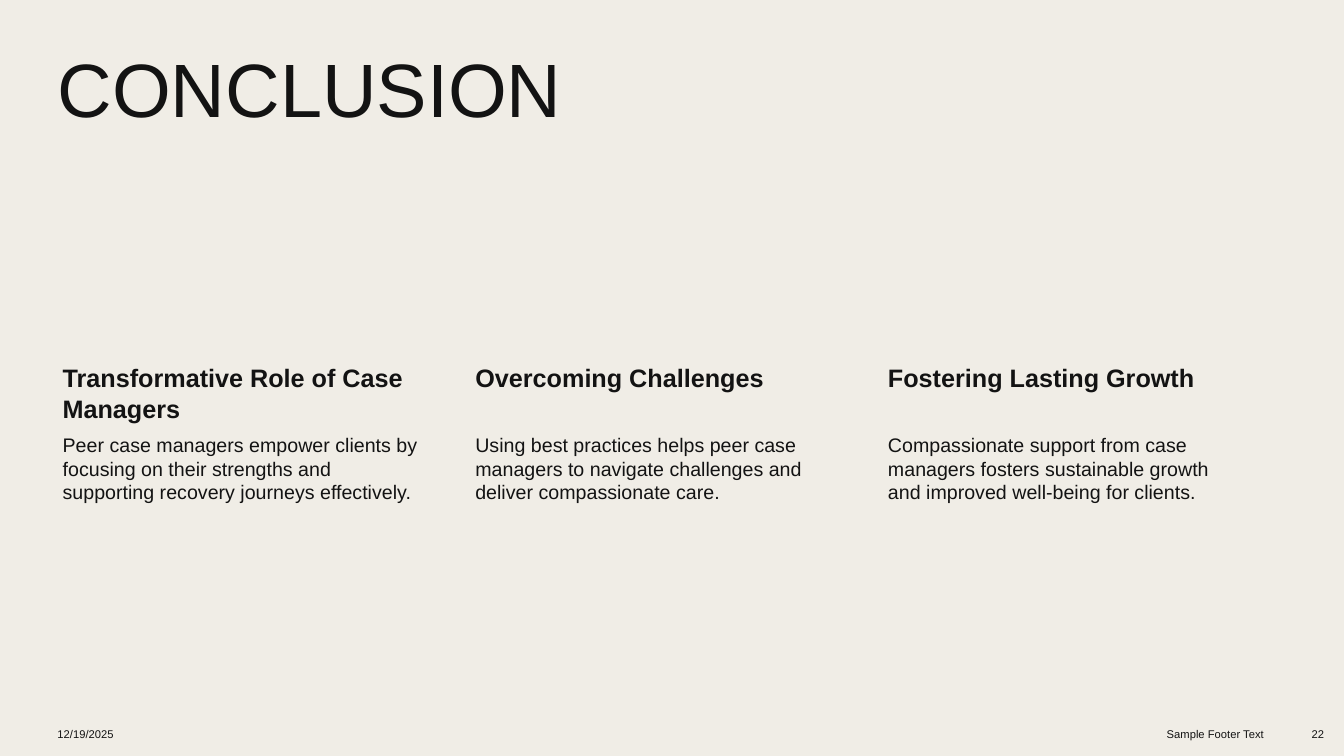
from dataclasses import dataclass

from pptx import Presentation
from pptx.dml.color import RGBColor
from pptx.enum import text
from pptx.util import Pt


@dataclass(frozen=True)
class Theme:
    font: str = "Arial"
    ink: RGBColor = RGBColor(0x13, 0x13, 0x13)
    paper: RGBColor = RGBColor(0xF0, 0xED, 0xE6)
    title: int = 54
    heading: int = 18
    body: int = 14
    footer: int = 8


theme = Theme()


def write(box, wording, size, bold=False, align=text.PP_ALIGN.LEFT,
          anchor=text.MSO_ANCHOR.TOP, insets=(7.2, 3.6, 7.2, 3.6)):
    """Fill a box with one styled paragraph; insets run left, top, right, bottom."""
    frame = box.text_frame
    frame.text = wording
    frame.word_wrap = True
    frame.auto_size = text.MSO_AUTO_SIZE.NONE
    frame.vertical_anchor = anchor
    (frame.margin_left, frame.margin_top,
     frame.margin_right, frame.margin_bottom) = map(Pt, insets)
    para = frame.paragraphs[0]
    para.alignment = align
    font = para.runs[0].font
    font.name, font.size, font.bold = theme.font, Pt(size), bold
    font.color.rgb = theme.ink
    return para


# Deck and background
deck = Presentation()
deck.slide_width, deck.slide_height = Pt(960), Pt(540)
page = deck.slides.add_slide(deck.slide_layouts[5])
page.background.fill.solid()
page.background.fill.fore_color.rgb = theme.paper

# Title
left = 34
title = page.shapes.title
title.left, title.top, title.width, title.height = Pt(left), Pt(34), Pt(857.5), Pt(128)
write(title, "CONCLUSION", theme.title).line_spacing = 0.9

# Three columns, each a heading above a body
columns = [
    ("Transformative Role of Case Managers",
     "Peer case managers empower clients by focusing on their strengths and "
     "supporting recovery journeys effectively."),
    ("Overcoming Challenges",
     "Using best practices helps peer case managers to navigate challenges and "
     "deliver compassionate care."),
    ("Fostering Lasting Growth",
     "Compassionate support from case managers fosters sustainable growth and "
     "improved well-being for clients."),
]
column_width, column_pitch = 268, 294.75
heading_top, heading_height, body_height = 257, 51, 172
for index, (heading, body) in enumerate(columns):
    column = page.shapes.add_group_shape()
    x = left + index * column_pitch
    heading_box = column.shapes.add_textbox(
        Pt(x), Pt(heading_top), Pt(column_width), Pt(heading_height))
    write(heading_box, heading, theme.heading, bold=True, insets=(10.8, 2, 2, 2))
    body_box = column.shapes.add_textbox(
        Pt(x), Pt(heading_top + heading_height), Pt(column_width), Pt(body_height))
    write(body_box, body, theme.body, insets=(10.8, 1.5, 1.5, 1.5))

# Footer: date, text and page number
footers = [
    ("12/19/2025", left, 224, text.PP_ALIGN.LEFT),
    ("Sample Footer Text", 700.5, 209.5, text.PP_ALIGN.RIGHT),
    ("22", 917, 36, text.PP_ALIGN.RIGHT),
]
for wording, x, width, align in footers:
    footer_box = page.shapes.add_textbox(Pt(x), Pt(511), Pt(width), Pt(27))
    para = write(footer_box, wording, theme.footer, align=align,
                 anchor=text.MSO_ANCHOR.MIDDLE)
    para.space_after = Pt(6)

deck.save("out.pptx")
